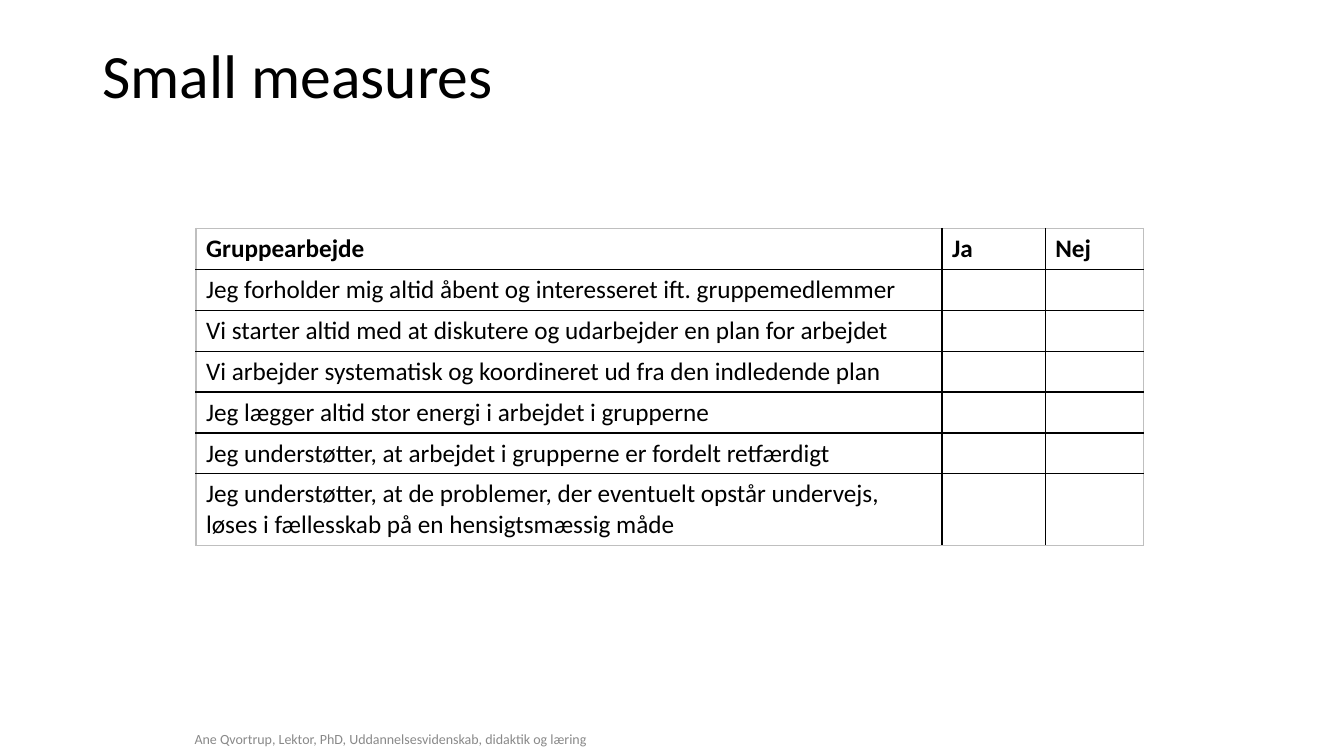
"""Build a slide with a yes/no checklist on group work."""
from lxml import etree
from pptx import Presentation
from pptx.dml.color import RGBColor
from pptx.enum.text import MSO_ANCHOR, PP_ALIGN
from pptx.oxml.ns import qn
from pptx.util import Cm, Pt

TOP, MIDDLE = MSO_ANCHOR.TOP, MSO_ANCHOR.MIDDLE
LEFT, CENTER = PP_ALIGN.LEFT, PP_ALIGN.CENTER
BLACK = RGBColor(0x00, 0x00, 0x00)
WHITE = RGBColor(0xFF, 0xFF, 0xFF)
GREY = RGBColor(0x89, 0x89, 0x89)
FRAME_GREY = RGBColor(0xBF, 0xBF, 0xBF)

STATEMENTS = [
    "Jeg forholder mig altid åbent og interesseret ift. gruppemedlemmer",
    "Vi starter altid med at diskutere og udarbejder en plan for arbejdet",
    "Vi arbejder systematisk og koordineret ud fra den indledende plan",
    "Jeg lægger altid stor energi i arbejdet i grupperne",
    "Jeg understøtter, at arbejdet i grupperne er fordelt retfærdigt",
    "Jeg understøtter, at de problemer, der eventuelt opstår undervejs, "
    "løses i fællesskab på en hensigtsmæssig måde",
]
ROWS = [("Gruppearbejde", "Ja", "Nej")] + [(statement, "", "") for statement in STATEMENTS]
COLUMN_WIDTHS = [18.8, 2.6, 2.48]
ROW_HEIGHTS = [1.03] * 6 + [1.8]


def write_text(text_frame, text, size, color, alignment=LEFT, bold=False):
    text_frame.text = text
    paragraph = text_frame.paragraphs[0]
    paragraph.alignment = alignment
    for font in [paragraph.font] + [run.font for run in paragraph.runs]:
        font.name = "Calibri"
        font.size = Pt(size)
        font.bold = bold
        font.color.rgb = color


def add_border(cell, side, color):
    line = etree.SubElement(cell._tc.get_or_add_tcPr(), qn(f"a:ln{side}"), w=str(Pt(1)))
    fill = etree.SubElement(line, qn("a:solidFill"))
    etree.SubElement(fill, qn("a:srgbClr"), val=str(color))


presentation = Presentation()
presentation.slide_width = Cm(33.87)
presentation.slide_height = Cm(19.05)
slide = presentation.slides.add_slide(presentation.slide_layouts[5])

title = slide.shapes.title
title.left, title.top, title.width, title.height = Cm(2.33), Cm(1.01), Cm(29.21), Cm(3.68)
title.text_frame.vertical_anchor = TOP
write_text(title.text_frame, "Small measures", 44, BLACK)
title.text_frame.paragraphs[0].line_spacing = 0.9

table = slide.shapes.add_table(
    len(ROWS), len(COLUMN_WIDTHS), Cm(4.94), Cm(5.76),
    Cm(sum(COLUMN_WIDTHS)), Cm(sum(ROW_HEIGHTS))).table
table.horz_banding = False
for column, width in zip(table.columns, COLUMN_WIDTHS):
    column.width = Cm(width)
last_row, last_column = len(ROWS) - 1, len(COLUMN_WIDTHS) - 1
for row_index, texts in enumerate(ROWS):
    table.rows[row_index].height = Cm(ROW_HEIGHTS[row_index])
    for column_index, text in enumerate(texts):
        cell = table.cell(row_index, column_index)
        write_text(cell.text_frame, text, 18, BLACK, bold=row_index == 0)
        on_frame = {"L": column_index == 0, "R": column_index == last_column,
                    "T": row_index == 0, "B": row_index == last_row}
        for side, is_outer in on_frame.items():
            add_border(cell, side, FRAME_GREY if is_outer else BLACK)
        cell.fill.solid()
        cell.fill.fore_color.rgb = WHITE

footer = slide.shapes.add_textbox(Cm(4.24), Cm(18.11), Cm(11.2), Cm(1.02))
footer.text_frame.word_wrap = True
footer.text_frame.vertical_anchor = MIDDLE
write_text(footer.text_frame,
           "Ane Qvortrup, Lektor, PhD, Uddannelsesvidenskab, didaktik og læring",
           10, GREY, CENTER)

presentation.save("out.pptx")
